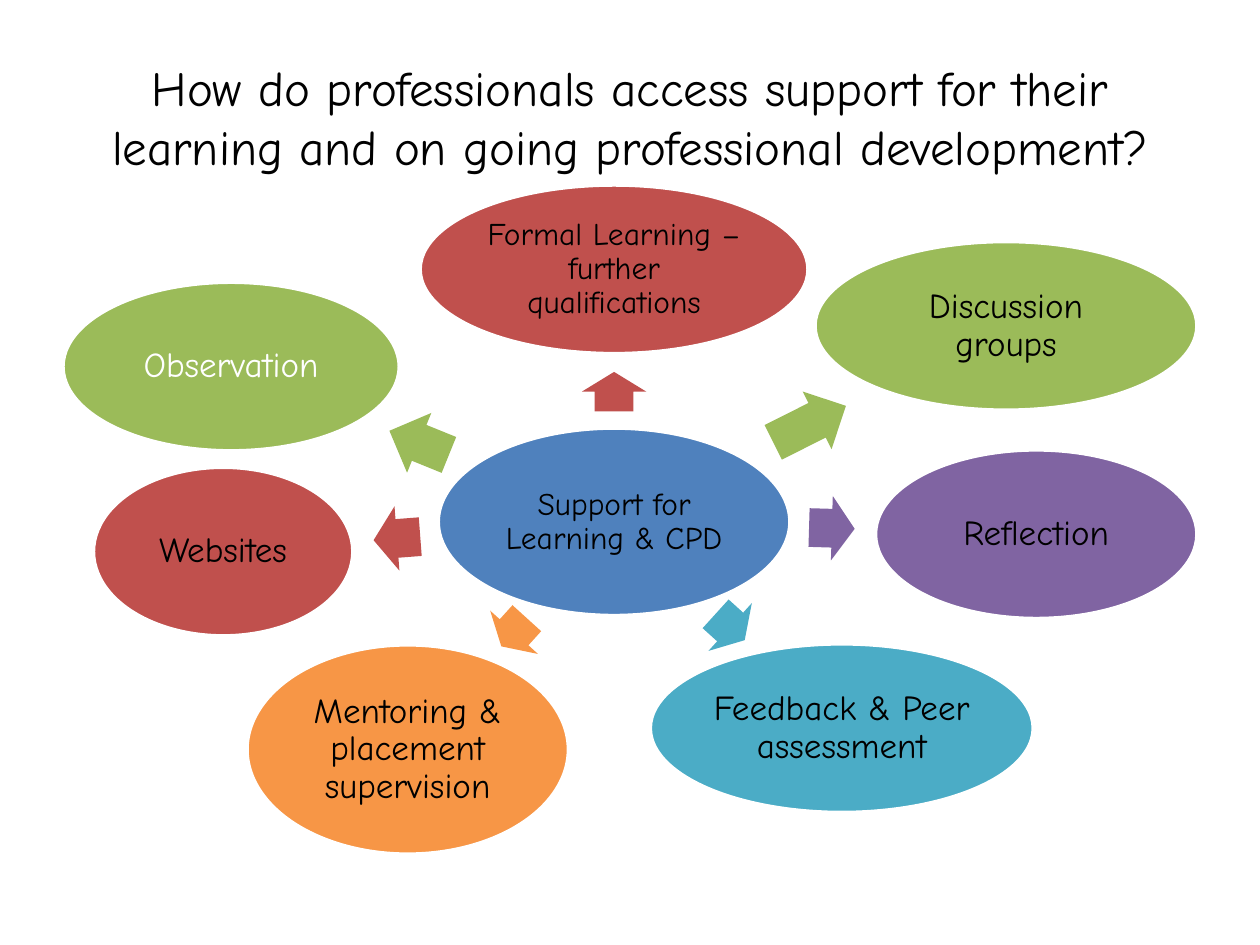
import math
import pptx
import pptx.util
import pptx.dml.color
import pptx.enum.shapes
import pptx.enum.text

Cm, Pt = pptx.util.Cm, pptx.util.Pt
SHAPE = pptx.enum.shapes.MSO_SHAPE
FONT = "Comic Neue"
COLOURS = {
    "black": "000000", "white": "FFFFFF", "blue": "4F81BD", "red": "C0504D",
    "green": "9BBB59", "purple": "8064A2", "teal": "4BACC6", "orange": "F79646",
}
TITLE = ("How do professionals access support for their "
         "learning and on going professional development?")

# Text, fill, text colour, size, then centre x, centre y, width, height in cm
HUB = ("Support for Learning & CPD", "blue", "black", 18, 11.11, 6.79, 7.09, 3.78)
TOPICS = [
    ("Formal Learning – further qualifications", "red", "black", 18, 11.11, 1.7, 7.82, 3.4),
    ("Discussion groups", "green", "black", 20, 19.01, 2.84, 7.7, 3.4),
    ("Reflection", "purple", "black", 20, 19.62, 7.04, 6.48, 3.4),
    ("Feedback & Peer assessment", "teal", "black", 20, 15.7, 10.95, 7.72, 3.4),
    ("Mentoring & placement supervision", "orange", "black", 20, 6.95, 11.38, 6.48, 4.22),
    ("Websites", "red", "black", 20, 3.23, 7.39, 5.23, 3.4),
    ("Observation", "green", "white", 20, 3.39, 3.66, 6.78, 3.4),
]
ARROW = 1.3     # arrow height in cm
SHARE = 0.53    # part of the gap that an arrow fills
MIDDLE = 0.49   # where in the gap its centre lies


def rgb(name):
    return pptx.dml.color.RGBColor.from_string(COLOURS[name])


def write(frame, text, size, colour, spacing=None):
    frame.word_wrap = True
    frame.vertical_anchor = pptx.enum.text.MSO_ANCHOR.MIDDLE
    para = frame.paragraphs[0]
    para.alignment = pptx.enum.text.PP_ALIGN.CENTER
    if spacing:
        para.line_spacing = spacing
    run = para.add_run()
    run.text = text
    run.font.name = FONT
    run.font.size = Pt(size)
    run.font.color.rgb = rgb(colour)


def add_part(slide, kind, fill, x, y, w, h):
    """Add a plain filled shape centred on x, y."""
    part = slide.shapes.add_shape(kind, Cm(x - w / 2), Cm(y - h / 2), Cm(w), Cm(h))
    part.shadow.inherit = False
    part.fill.solid()
    part.fill.fore_color.rgb = rgb(fill)
    return part


def add_bubble(slide, left, top, item):
    text, fill, colour, size, x, y, w, h = item
    oval = add_part(slide, SHAPE.OVAL, fill, left + x, top + y, w, h)
    oval.line.color.rgb = rgb("white")
    oval.line.width = Pt(2)
    frame = oval.text_frame
    frame.margin_left = frame.margin_right = Cm(0.08)
    frame.margin_top = frame.margin_bottom = Cm(0.08)
    write(frame, text, size, colour, 0.9)


def reach(item, angle):
    """Distance from the centre of an oval to its edge at an angle."""
    w, h = item[-2:]
    return 0.5 / math.hypot(math.cos(angle) / w, math.sin(angle) / h)


def add_arrow(slide, left, top, hub, topic):
    """Point an arrow from hub to topic in the gap between them."""
    x, y = hub[4:6]
    dx, dy = topic[4] - x, topic[5] - y
    angle = math.atan2(dy, dx)
    start = reach(hub, angle)
    gap = math.hypot(dx, dy) - start - reach(topic, angle)
    mid = start + MIDDLE * gap
    arrow = add_part(slide, SHAPE.RIGHT_ARROW, topic[1],
                     left + x + mid * math.cos(angle),
                     top + y + mid * math.sin(angle), SHARE * gap, ARROW)
    arrow.adjustments[0] = 0.6
    arrow.adjustments[1] = 0.5
    arrow.rotation = math.degrees(angle) % 360
    arrow.line.fill.background()


def add_title(slide, left, top, width, height):
    box = slide.shapes.add_textbox(Cm(left), Cm(top), Cm(width), Cm(height))
    write(box.text_frame, TITLE, 28, "black")


def add_web(slide, left, top):
    """Place the hub with its ring of topics and arrows."""
    add_bubble(slide, left, top, HUB)
    for topic in TOPICS:
        add_arrow(slide, left, top, HUB, topic)
        add_bubble(slide, left, top, topic)


def main():
    deck = pptx.Presentation()
    deck.slide_width, deck.slide_height = Cm(25.4), Cm(19.05)
    slide = deck.slides.add_slide(deck.slide_layouts[6])
    add_title(slide, 1.27, 0.76, 22.86, 3.18)
    add_web(slide, 1.27, 3.73)
    deck.save("out.pptx")


if __name__ == "__main__":
    main()
